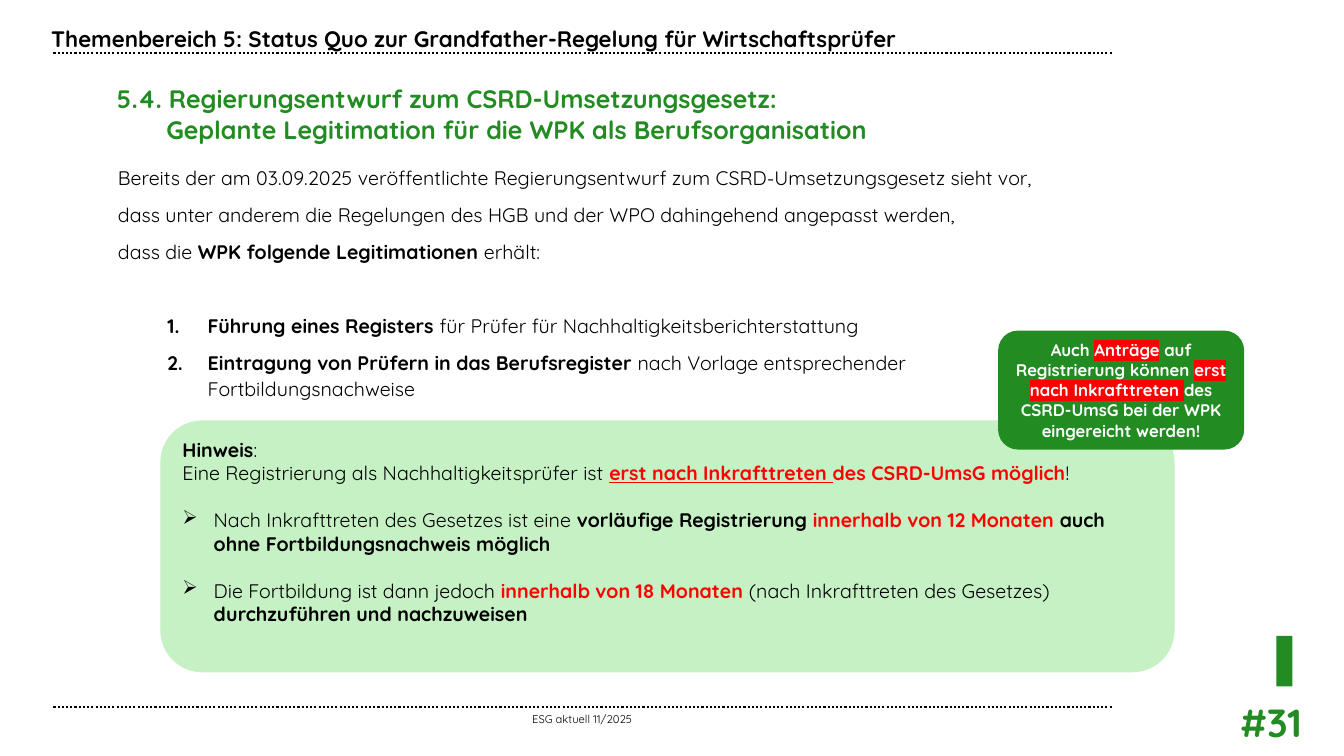
from dataclasses import dataclass

from lxml import etree
from pptx import Presentation
from pptx import util as u
from pptx.dml.color import RGBColor
from pptx.enum import dml, shapes, text
from pptx.oxml import ns

FONT = "Quicksand"
GREEN, PALE, RED, BLACK, WHITE = "228B22", "C5F1C5", "FF0000", "000000", "FFFFFF"
BLANK_LINE = 16.7  # points, one line of 14 pt text


@dataclass
class Run:
    text: str
    bold: bool = False
    color: str = BLACK
    underline: bool = False
    highlight: str = ""


@dataclass
class Para:
    runs: list[Run]
    size: float = 14
    align: text.PP_ALIGN = text.PP_ALIGN.LEFT
    before: float = 0
    spacing: float = 1.0
    margin: float = 0
    hanging: float = 0
    bullet: str = ""
    numbered: bool = False


def rgb(color: str) -> RGBColor:
    return RGBColor.from_string(color)


def add_run(p, run: Run, size: float) -> None:
    """Add the text, turning each newline into a line break."""
    for i, part in enumerate(run.text.split("\n")):
        if i:
            p.add_line_break()
        r = p.add_run()
        r.text = part
        r.font.name, r.font.size = FONT, u.Pt(size)
        r.font.bold, r.font.underline = run.bold, run.underline
        r.font.color.rgb = rgb(run.color)
        if run.highlight:
            mark = etree.Element(ns.qn("a:highlight"))
            etree.SubElement(mark, ns.qn("a:srgbClr"), val=run.highlight)
            r.font._element.find(ns.qn("a:solidFill")).addnext(mark)


def fill_text(sp, paras: list[Para], anchor=text.MSO_ANCHOR.TOP, inset: bool = True) -> None:
    tf = sp.text_frame
    tf.word_wrap, tf.auto_size = True, text.MSO_AUTO_SIZE.NONE
    tf.vertical_anchor = anchor
    tf.margin_left = tf.margin_right = u.Inches(0.1 if inset else 0)
    tf.margin_top = tf.margin_bottom = u.Inches(0.05 if inset else 0)
    for i, para in enumerate(paras):
        p = tf.add_paragraph() if i else tf.paragraphs[0]
        p.alignment, p.line_spacing = para.align, para.spacing
        p.space_before = u.Pt(para.before)
        pPr = p._p.get_or_add_pPr()
        pPr.set("marL", str(u.Inches(para.margin)))
        pPr.set("indent", str(-u.Inches(para.hanging)))
        if para.numbered:
            etree.SubElement(pPr, ns.qn("a:buAutoNum"), type="arabicPeriod")
        elif para.bullet:
            etree.SubElement(pPr, ns.qn("a:buChar"), char=para.bullet)
        for run in para.runs:
            add_run(p, run, para.size)


def place(sp, left: float, top: float, width: float, height: float) -> None:
    sp.left, sp.top = u.Inches(left), u.Inches(top)
    sp.width, sp.height = u.Inches(width), u.Inches(height)


def add_box(s, at: tuple, paras: list[Para], **options) -> None:
    sp = s.shapes.add_textbox(*map(u.Inches, at))
    fill_text(sp, paras, **options)


def add_panel(s, kind, at: tuple, color: str):
    sp = s.shapes.add_shape(kind, *map(u.Inches, at))
    sp.shadow.inherit = False
    sp.fill.solid()
    sp.fill.fore_color.rgb = rgb(color)
    sp.line.fill.background()
    return sp


def add_dotted_rule(s, y: float) -> None:
    line = s.shapes.add_connector(
        shapes.MSO_CONNECTOR.STRAIGHT, *map(u.Inches, (0.53, y, 11.04, y)))
    line.line.color.rgb = rgb(BLACK)
    line.line.width = u.Pt(1.5)
    line.line.dash_style = dml.MSO_LINE.ROUND_DOT
    etree.SubElement(line._element.spPr, ns.qn("a:effectLst"))


INTRO = [
    [Run("Bereits der am 03.09.2025 veröffentlichte Regierungsentwurf zum "
         "CSRD-Umsetzungsgesetz sieht vor,")],
    [Run("dass unter anderem die Regelungen des HGB und der WPO dahingehend "
         "angepasst werden,")],
    [Run("dass die "), Run("WPK folgende Legitimationen ", True), Run("erhält:")],
]
POWERS = [
    [Run("Führung eines Registers ", True),
     Run("für Prüfer für Nachhaltigkeitsberichterstattung")],
    [Run("Eintragung von Prüfern in das Berufsregister ", True),
     Run("nach Vorlage entsprechender \nFortbildungsnachweise")],
]
NOTE = [
    [Run("Hinweis", True), Run(":")],
    [Run("Eine Registrierung als Nachhaltigkeitsprüfer ist "),
     Run("erst nach Inkrafttreten ", True, RED, underline=True),
     Run("des CSRD-UmsG möglich", True, RED), Run("!")],
]
DEADLINES = [
    [Run("Nach Inkrafttreten des Gesetzes ist eine "),
     Run("vorläufige Registrierung ", True),
     Run("innerhalb von 12 Monaten ", True, RED),
     Run("auch ohne Fortbildungsnachweis möglich", True)],
    [Run("Die Fortbildung ist dann jedoch "),
     Run("innerhalb von 18 Monaten ", True, RED),
     Run("(nach Inkrafttreten des Gesetzes) "),
     Run("durchzuführen und nachzuweisen", True)],
]
CALLOUT = [
    Run("Auch ", True, WHITE),
    Run("Anträge", True, WHITE, highlight=RED),
    Run(" auf Registrierung können ", True, WHITE),
    Run("erst nach Inkrafttreten ", True, WHITE, highlight=RED),
    Run("des CSRD-UmsG bei der WPK eingereicht werden!", True, WHITE),
]


def main() -> None:
    prs = Presentation()
    prs.slide_width, prs.slide_height = u.Inches(13.33), u.Inches(7.5)
    s = prs.slides.add_slide(prs.slide_layouts[5])
    center, middle = text.PP_ALIGN.CENTER, text.MSO_ANCHOR.MIDDLE

    for y in (0.53, 7.01):
        add_dotted_rule(s, y)
    add_box(s, (11.39, 6.88, 1.62, 0.57),
            [Para([Run("#31", True, GREEN)], 28, text.PP_ALIGN.RIGHT)])
    add_box(s, (0.52, 7.07, 10.51, 0.13),
            [Para([Run("ESG aktuell 11/2025")], 8, center)], anchor=middle, inset=False)
    add_panel(s, shapes.MSO_SHAPE.RECTANGLE, (12.66, 6.31, 0.16, 0.5), GREEN)
    add_box(s, (0.41, 0.2, 11.06, 0.37),
            [Para([Run("Themenbereich 5: Status Quo zur Grandfather-Regelung für "
                       "Wirtschaftsprüfer", True)], 16)])

    title = s.shapes.title
    place(title, 1.16, 0.83, 9.76, 0.79)
    fill_text(title, [Para([Run("5.4. Regierungsentwurf zum CSRD-Umsetzungsgesetz: \n"
                                "Geplante Legitimation für die WPK als Berufsorganisation",
                                True, GREEN)], 18, margin=0.49, hanging=0.49)], inset=False)

    intro = [Para(runs, before=8 if i else 0, spacing=1.1) for i, runs in enumerate(INTRO)]
    powers = [Para(runs, before=8 if i else 34.4, spacing=1.1, margin=0.89, hanging=0.4,
                   numbered=True) for i, runs in enumerate(POWERS)]
    add_box(s, (1.17, 1.62, 9.51, 2.5), intro + powers, inset=False)

    note = add_panel(s, shapes.MSO_SHAPE.ROUNDED_RECTANGLE, (1.59, 4.17, 10.06, 2.5), PALE)
    fill_text(note, [Para(runs) for runs in NOTE]
              + [Para(runs, before=BLANK_LINE, margin=0.31, hanging=0.31, bullet="➢")
                 for runs in DEADLINES])

    callout = add_panel(s, shapes.MSO_SHAPE.ROUNDED_RECTANGLE, (9.9, 3.28, 2.44, 1.18), GREEN)
    fill_text(callout, [Para(CALLOUT, 12, center)], anchor=middle)

    prs.save("out.pptx")


if __name__ == "__main__":
    main()
